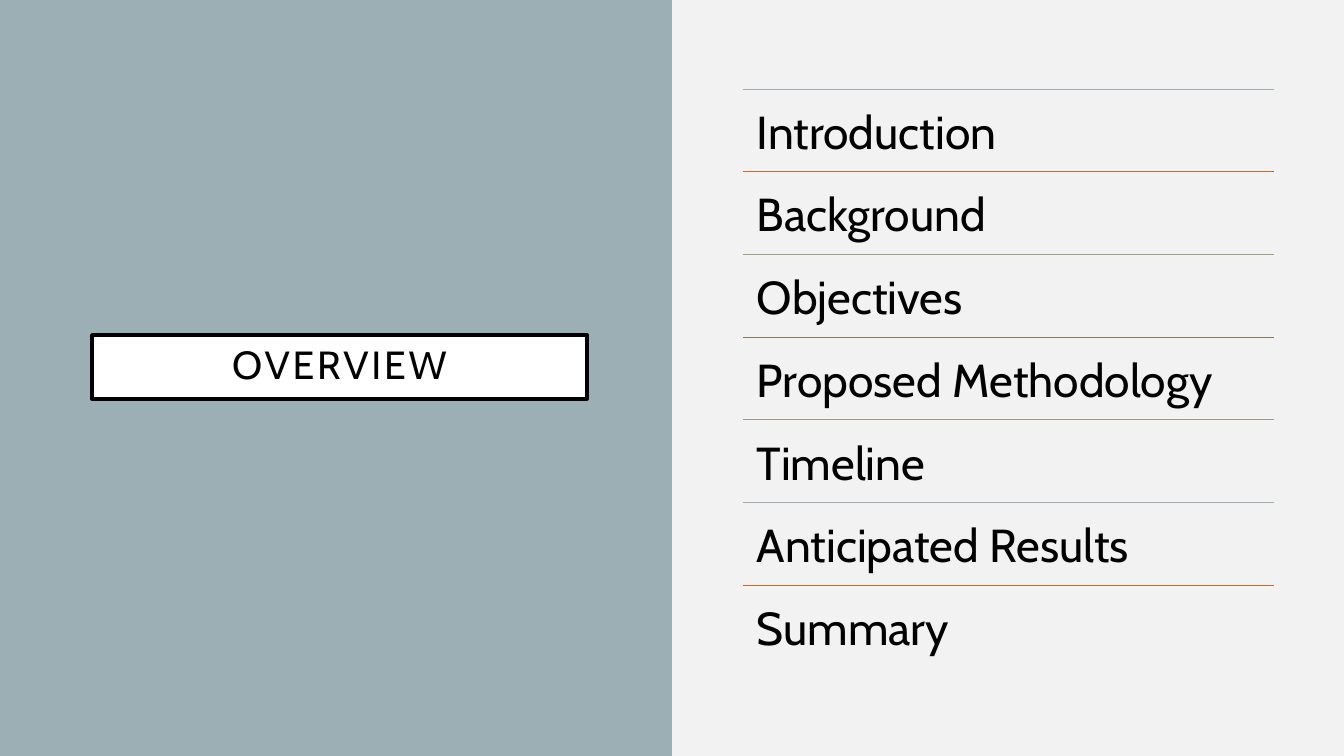
from lxml.etree import SubElement
from pptx import Presentation
from pptx.dml.color import RGBColor
from pptx.enum.shapes import MSO_CONNECTOR, MSO_SHAPE
from pptx.enum.text import MSO_ANCHOR, PP_ALIGN
from pptx.oxml.ns import qn
from pptx.util import Emu, Pt

BLACK = RGBColor(0x00, 0x00, 0x00)
WHITE = RGBColor(0xFF, 0xFF, 0xFF)
PALE = RGBColor(0xF2, 0xF2, 0xF2)
SLATE = RGBColor(0x9B, 0xAF, 0xB5)
RUST = RGBColor(0xC9, 0x67, 0x31)
SAGE = RGBColor(0x9C, 0xA3, 0x83)
BROWN = RGBColor(0x87, 0x79, 0x5D)
STONE = RGBColor(0xA0, 0x98, 0x8C)

FONT = "Cabin"
TOPICS = [
    ("Introduction", SLATE),
    ("Background", RUST),
    ("Objectives", SAGE),
    ("Proposed Methodology", BROWN),
    ("Timeline", STONE),
    ("Anticipated Results", SLATE),
    ("Summary", RUST),
]
LEFT, TOP, WIDTH, HEIGHT = 743, 89, 531, 579


def px(count):
    return Emu(round(count * 914400 / 100.8))


def add_box(slide, x, y, w, h, fill, line=None):
    box = slide.shapes.add_shape(MSO_SHAPE.RECTANGLE, px(x), px(y), px(w), px(h))
    box.shadow.inherit = False
    box.fill.solid()
    box.fill.fore_color.rgb = fill
    if line is None:
        box.line.fill.background()
    else:
        box.line.color.rgb = line
        box.line.width = Pt(2.5)
    return box


def set_text(shape, text, size, inset, anchor, align):
    frame = shape.text_frame
    frame.word_wrap = True
    frame.vertical_anchor = anchor
    frame.margin_left = frame.margin_right = px(inset)
    frame.margin_top = frame.margin_bottom = px(inset)
    para = frame.paragraphs[0]
    para.text = text
    para.alignment = align
    para.font.name = FONT
    para.font.size = Pt(size)
    para.font.color.rgb = BLACK
    return para


def add_title(slide, text):
    box = add_box(slide, 92, 335, 495, 64, WHITE, BLACK)
    para = set_text(box, text, 28, 20, MSO_ANCHOR.MIDDLE, PP_ALIGN.CENTER)
    para.line_spacing = 0.9
    para.runs[0].font._element.set("spc", "200")


def add_rule(slide, y, color):
    rule = slide.shapes.add_connector(
        MSO_CONNECTOR.STRAIGHT, px(LEFT), px(y), px(LEFT + WIDTH), px(y)
    )
    rule.line.color.rgb = color
    rule.line.width = Pt(0.5)
    SubElement(rule._element.spPr, qn("a:effectLst"))


def add_topic(slide, y, h, text, color):
    add_rule(slide, y, color)
    box = slide.shapes.add_textbox(px(LEFT), px(y), px(WIDTH), px(h))
    set_text(box, text, 33, 14, MSO_ANCHOR.TOP, PP_ALIGN.LEFT)


def main():
    deck = Presentation()
    deck.slide_width, deck.slide_height = px(1344), px(756)
    slide = deck.slides.add_slide(deck.slide_layouts[6])
    slide.background.fill.solid()
    slide.background.fill.fore_color.rgb = PALE

    add_box(slide, 0, 0, 672, 756, SLATE)
    add_title(slide, "OVERVIEW")
    step = HEIGHT / len(TOPICS)
    for row, (text, color) in enumerate(TOPICS):
        add_topic(slide, TOP + row * step, step, text, color)

    deck.save("out.pptx")


if __name__ == "__main__":
    main()
